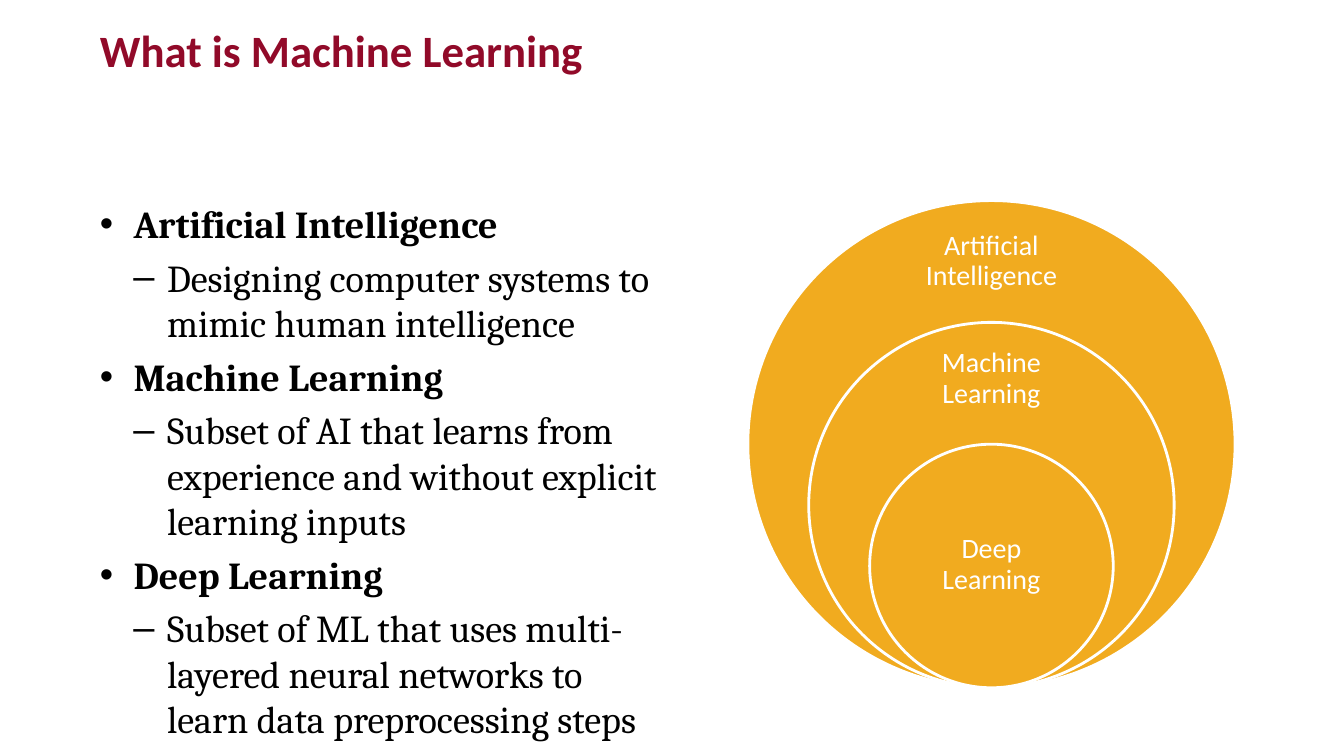
from dataclasses import dataclass
from lxml.etree import SubElement
from pptx import Presentation
from pptx.dml.color import RGBColor
from pptx.enum.shapes import MSO_SHAPE as Shape
from pptx.enum.text import MSO_ANCHOR as Anchor, PP_ALIGN as Align
from pptx.oxml.ns import qn
from pptx.util import Pt

TITLE = "What is Machine Learning"
DEFINITIONS = [
    ("Artificial Intelligence", "Designing computer systems to mimic human intelligence"),
    ("Machine Learning", "Subset of AI that learns from experience and without explicit learning inputs"),
    ("Deep Learning", "Subset of ML that uses multi-layered neural networks to learn data preprocessing steps"),
]
LABEL_BOXES = [(160.6, 51.8), (246.2, 49), (360, 87)]


@dataclass(frozen=True)
class Theme:
    heading: RGBColor = RGBColor(0x91, 0x0A, 0x29)
    body: RGBColor = RGBColor(0, 0, 0)
    circle: RGBColor = RGBColor(0xF1, 0xAB, 0x1F)
    light: RGBColor = RGBColor(0xFF, 0xFF, 0xFF)
    sans: str = "Calibri"
    serif: str = "Cambria"
    title_size: float = 32
    body_size: float = 27.2
    label_size: float = 20


THEME = Theme()
LEFT = 71.4
CONTENT_TOP = 143.3
DIAMETER = 348
CENTER_X = 708.2
LABEL_WIDTH = 122
INDENT = 24


def place(shape, left, top, width, height):
    shape.left, shape.top = Pt(left), Pt(top)
    shape.width, shape.height = Pt(width), Pt(height)


def set_frame(frame, anchor, insets):
    frame.word_wrap = True
    frame.vertical_anchor = anchor
    frame.margin_left, frame.margin_top, frame.margin_right, frame.margin_bottom = map(Pt, insets)


def add_text(paragraph, text, name, size, color, bold=False):
    run = paragraph.add_run()
    run.text = text
    font = run.font
    font.name, font.size, font.bold = name, Pt(size), bold
    font.color.rgb = color


def add_title(slide):
    title = slide.shapes.title
    place(title, LEFT, 0, 643, 74.2)
    set_frame(title.text_frame, Anchor.MIDDLE, (0, 3.6, 7.2, 0))
    paragraph = title.text_frame.paragraphs[0]
    paragraph.alignment = Align.LEFT
    paragraph.line_spacing = Pt(THEME.title_size)
    add_text(paragraph, TITLE, THEME.sans, THEME.title_size, THEME.heading, True)


def add_definitions(slide):
    box = slide.shapes.add_textbox(Pt(LEFT), Pt(CONTENT_TOP), Pt(400.3), Pt(DIAMETER))
    frame = box.text_frame
    set_frame(frame, Anchor.TOP, (0, 0, 0, 0))
    lines = [(level, text) for pair in DEFINITIONS for level, text in enumerate(pair)]
    for index, (level, text) in enumerate(lines):
        paragraph = frame.add_paragraph() if index else frame.paragraphs[0]
        paragraph.level = level
        paragraph.space_before = Pt(THEME.body_size * 0.2 if index else 0)
        properties = paragraph._p.get_or_add_pPr()
        properties.set("marL", str(Pt(INDENT * (level + 1))))
        properties.set("indent", str(Pt(-INDENT)))
        SubElement(properties, qn("a:buFont"), typeface="Arial")
        SubElement(properties, qn("a:buChar"), char="•–"[level])
        add_text(paragraph, text, THEME.serif, THEME.body_size, THEME.body, level == 0)


def add_nested_circles(slide):
    bottom = CONTENT_TOP + DIAMETER
    for index, ((term, _), (label_top, label_height)) in enumerate(zip(DEFINITIONS, LABEL_BOXES)):
        size = DIAMETER * (1 - index / 4)
        circle = slide.shapes.add_shape(
            Shape.OVAL, Pt(CENTER_X - size / 2), Pt(bottom - size), Pt(size), Pt(size))
        circle.shadow.inherit = False
        circle.fill.solid()
        circle.fill.fore_color.rgb = THEME.circle
        circle.line.color.rgb = THEME.light
        circle.line.width = Pt(2)

        label = slide.shapes.add_textbox(
            Pt(CENTER_X - LABEL_WIDTH / 2), Pt(label_top), Pt(LABEL_WIDTH), Pt(label_height))
        set_frame(label.text_frame, Anchor.MIDDLE, (11.4,) * 4)
        paragraph = label.text_frame.paragraphs[0]
        paragraph.alignment = Align.CENTER
        paragraph.line_spacing = 0.9
        add_text(paragraph, term, THEME.sans, THEME.label_size, THEME.light)


def main():
    presentation = Presentation()
    presentation.slide_width, presentation.slide_height = Pt(960), Pt(540)
    slide = presentation.slides.add_slide(presentation.slide_layouts[5])
    add_title(slide)
    add_definitions(slide)
    add_nested_circles(slide)
    presentation.save("out.pptx")


if __name__ == "__main__":
    main()
